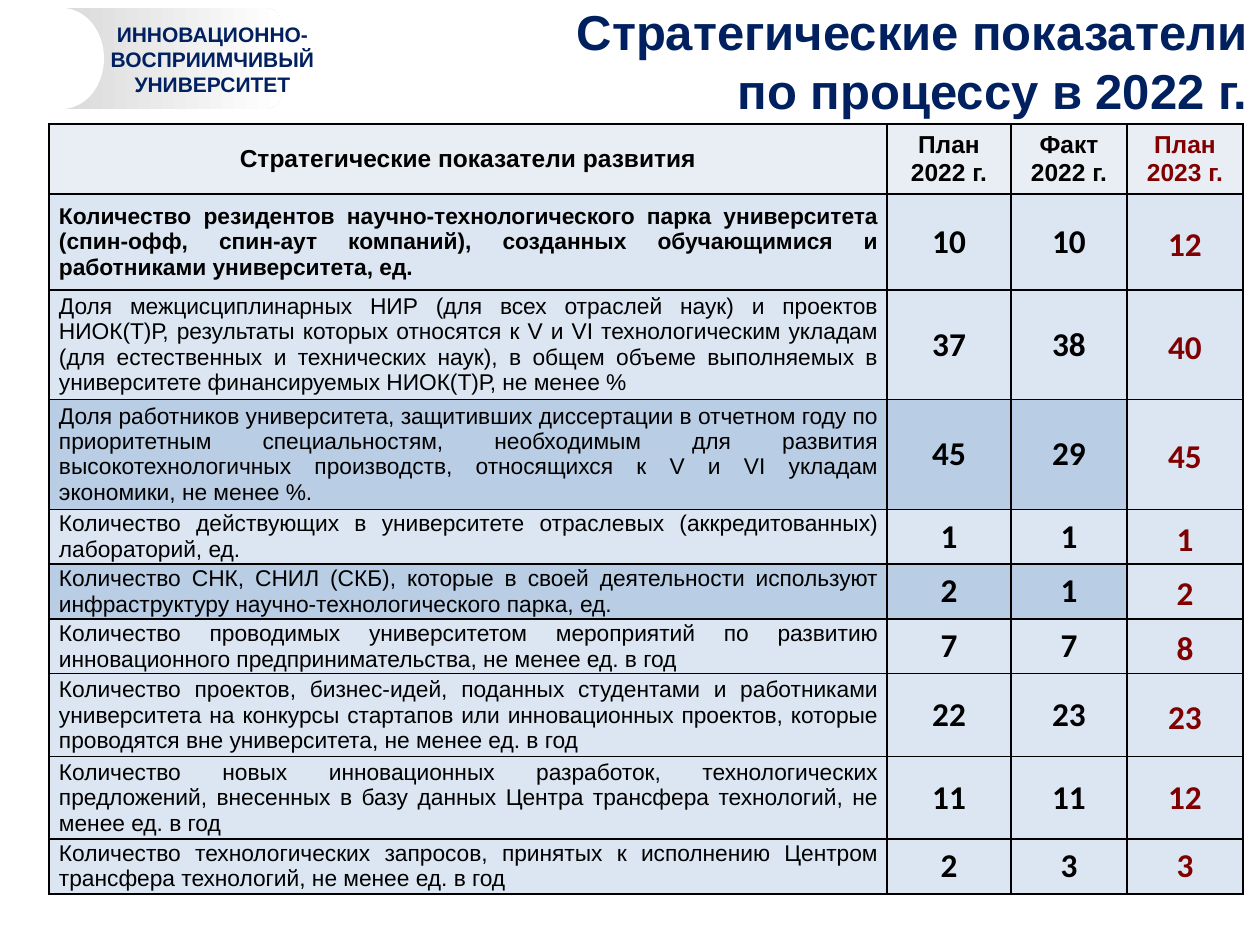
from lxml import etree
from pptx import Presentation
from pptx import util as u
from pptx.dml.color import RGBColor
from pptx.enum import shapes, text
from pptx.oxml.ns import qn

PX = u.Inches(1) / 126
HUES = {
    "navy": "002060", "black": "000000", "red": "800000", "white": "FFFFFF",
    "grey": "D9D9D9", "head": "E9EDF4", "pale": "DCE6F2", "blue": "B9CDE5",
}
LEFT, MID = text.PP_ALIGN.JUSTIFY, text.PP_ALIGN.CENTER
COLS = [838, 124, 116, 116]
HEADS = ["Стратегические показатели развития", "План 2022 г.", "Факт 2022 г.", "План 2023 г."]
ROWS = [
    (96, "pale", "Количество резидентов научно-технологического парка университета (спин-офф, спин-аут компаний), созданных обучающимися и работниками университета, ед.", 10, 10, 12),
    (109, "pale", "Доля межцисциплинарных НИР (для всех отраслей наук) и проектов НИОК(Т)Р, результаты которых относятся к V и VI технологическим укладам (для естественных и технических наук), в общем объеме выполняемых в университете финансируемых НИОК(Т)Р, не менее %", 37, 38, 40),
    (110, "blue", "Доля работников университета, защитивших диссертации в отчетном году по приоритетным специальностям, необходимым для развития высокотехнологичных производств, относящихся к V и VI укладам экономики, не менее %.", 45, 29, 45),
    (54, "pale", "Количество действующих в университете отраслевых (аккредитованных) лабораторий, ед.", 1, 1, 1),
    (55, "blue", "Количество СНК, СНИЛ (СКБ), которые в своей деятельности используют инфраструктуру научно-технологического парка, ед.", 2, 1, 2),
    (54, "pale", "Количество проводимых университетом мероприятий по развитию инновационного предпринимательства, не менее ед. в год", 7, 7, 8),
    (83, "pale", "Количество проектов, бизнес-идей, поданных студентами и работниками университета на конкурсы стартапов или инновационных проектов, которые проводятся вне университета, не менее ед. в год", 22, 23, 23),
    (82, "pale", "Количество новых инновационных разработок, технологических предложений, внесенных в базу данных Центра трансфера технологий, не менее ед. в год", 11, 11, 12),
    (55, "pale", "Количество технологических запросов, принятых к исполнению Центром трансфера технологий, не менее ед. в год", 2, 3, 3),
]


def px(n):
    return u.Emu(round(n * PX))


def rgb(hue):
    return RGBColor.from_string(HUES[hue])


def write(frame, words, size=13, face="Arial", hue="black", bold=True, align=MID, space=None):
    frame.word_wrap = True
    par = frame.paragraphs[0]
    par.text = words
    par.alignment = align
    par.line_spacing = space
    for run in par.runs:
        font = run.font
        font.size, font.name, font.bold = u.Pt(size), face, bold
        font.color.rgb = rgb(hue)


def title(slide, x, y, w, h):
    box = slide.shapes.title
    box.left, box.top, box.width, box.height = map(px, (x, y, w, h))
    frame = box.text_frame
    frame.auto_size = text.MSO_AUTO_SIZE.NONE
    frame.vertical_anchor = text.MSO_ANCHOR.MIDDLE
    write(frame, "Стратегические показатели\vпо процессу в 2022 г.",
          size=28, hue="navy", align=text.PP_ALIGN.RIGHT)


def plain(slide, kind, x, y, w, h):
    item = slide.shapes.add_shape(kind, *map(px, (x, y, w, h)))
    item.shadow.inherit = False
    item.line.fill.background()
    return item


def badge(slide, x, y, w, h):
    kind = shapes.MSO_SHAPE
    band = plain(slide, kind.ROUNDED_RECTANGLE, x + 34, y, 228, h)
    band.fill.gradient()
    band.fill.gradient_angle = 0
    for stop, hue in zip(band.fill.gradient_stops, ("grey", "white")):
        stop.color.rgb = rgb(hue)
    disc = plain(slide, kind.OVAL, x, y, 84, h)
    disc.fill.solid()
    disc.fill.fore_color.rgb = rgb("white")
    label = slide.shapes.add_textbox(*map(px, (x + 78, y + 7, w - 78, 89)))
    frame = label.text_frame
    frame.margin_left = frame.margin_right = px(6)
    write(frame, "ИННОВАЦИОННО-ВОСПРИИМЧИВЫЙ УНИВЕРСИТЕТ", size=12, hue="navy")


def border(cell):
    props = cell._tc.get_or_add_tcPr()
    for spot, side in enumerate(("a:lnL", "a:lnR", "a:lnT", "a:lnB")):
        line = etree.Element(qn(side), w=str(u.Pt(1)))
        fill = etree.SubElement(line, qn("a:solidFill"))
        etree.SubElement(fill, qn("a:srgbClr"), val=HUES["black"])
        props.insert(spot, line)


def put(cell, words, tone, **form):
    cell.margin_left = cell.margin_right = px(10)
    cell.margin_top = cell.margin_bottom = 0
    cell.vertical_anchor = text.MSO_ANCHOR.MIDDLE
    cell.fill.solid()
    cell.fill.fore_color.rgb = rgb(tone)
    border(cell)
    write(cell.text_frame, words, **form)


def grid(slide, x, y, w, h):
    table = slide.shapes.add_table(len(ROWS) + 1, len(COLS), *map(px, (x, y, w, h))).table
    table.first_row = table.horz_banding = False
    for col, wide in zip(table.columns, COLS):
        col.width = px(wide)
    for row, tall in zip(table.rows, [70] + [spec[0] for spec in ROWS]):
        row.height = px(tall)
    last = len(COLS) - 1
    for c, head in enumerate(HEADS):
        put(table.cell(0, c), head, "head", size=14, hue="red" if c == last else "black")
    for r, (tall, tone, name, *nums) in enumerate(ROWS, 1):
        put(table.cell(r, 0), name, tone, bold=r == 1, align=LEFT)
        for c, num in enumerate(nums, 1):
            goal = c == last
            put(table.cell(r, c), str(num), "pale" if goal else tone, size=19, face="Calibri",
                hue="red" if goal else "black", space=1.15 if goal and r < 8 else None)


def main():
    deck = Presentation()
    deck.slide_width, deck.slide_height = px(1260), px(945)
    slide = deck.slides.add_slide(deck.slide_layouts[5])
    title(slide, 299, 8, 961, 105)
    badge(slide, 20, 8, 307, 101)
    grid(slide, 49, 124, sum(COLS), 768)
    deck.save("out.pptx")


if __name__ == "__main__":
    main()
